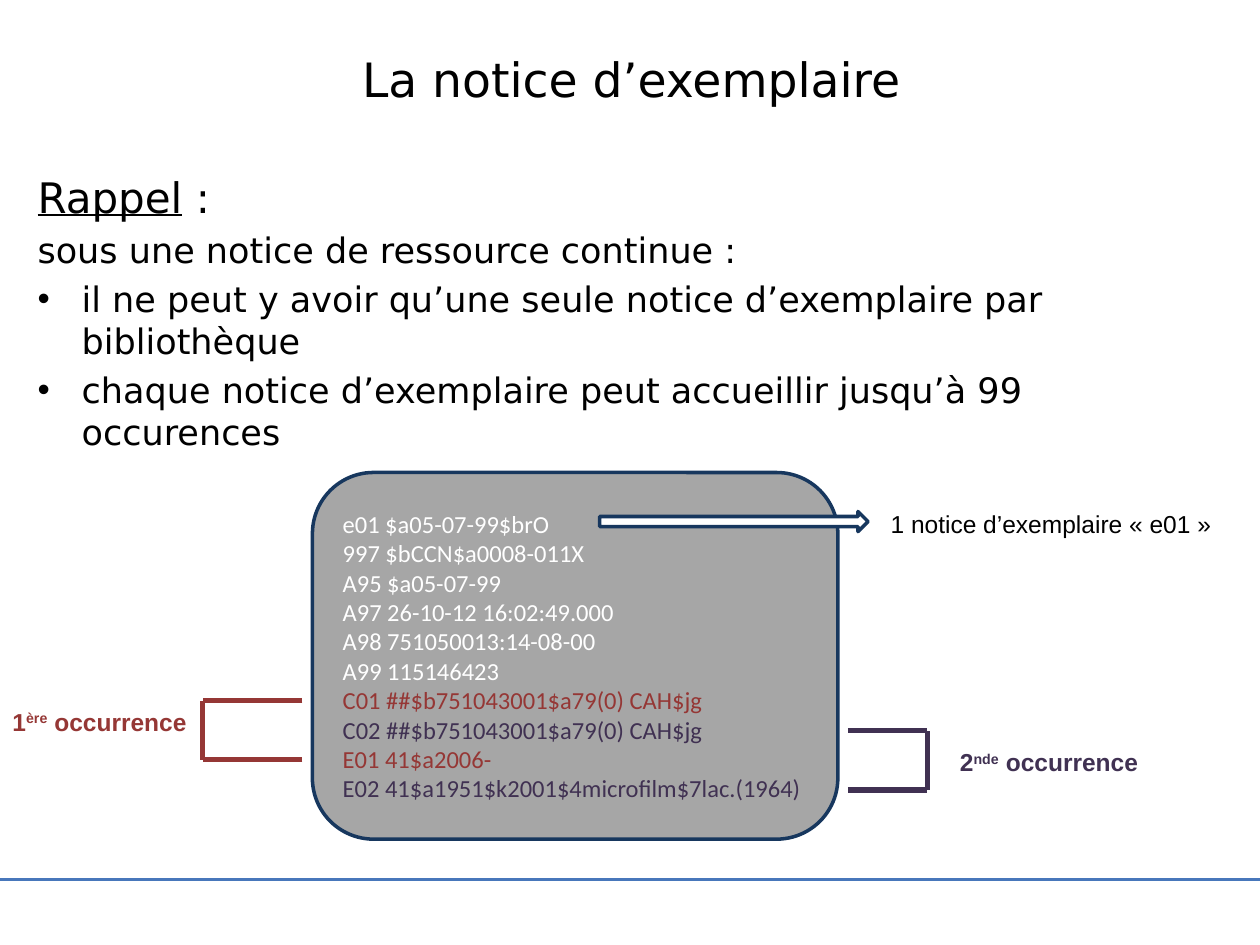
from lxml.etree import SubElement
from pptx import Presentation
from pptx.dml.color import RGBColor
from pptx.enum.shapes import MSO_CONNECTOR, MSO_SHAPE
from pptx.enum.text import MSO_ANCHOR, PP_ALIGN
from pptx.oxml.ns import qn
from pptx.util import Pt

COLORS = {
    "black": "000000", "white": "FFFFFF", "gray": "A6A6A6", "navy": "17375E",
    "blue": "4877BB", "red": "953735", "purple": "403152",
}


class SlideBuilder:
    """Draws styled elements on the current slide, with lengths in points."""

    def __init__(self, slide):
        self.slide = slide
        self.heading_font = "DejaVu Sans"
        self.record_font = "Calibri"
        self.label_font = "Arial"

    def color(self, name):
        return RGBColor.from_string(COLORS[name])

    def run(self, paragraph, text, font, size, color="black", bold=False,
            underline=False, superscript=False):
        run = paragraph.add_run()
        run.text = text
        run.font.name = font
        run.font.size = Pt(size)
        run.font.bold = bold
        run.font.underline = underline
        run.font.color.rgb = self.color(color)
        if superscript:
            run._r.get_or_add_rPr().set("baseline", "30000")

    def textbox(self, left, top, width, height, wrap=True):
        shape = self.slide.shapes.add_textbox(Pt(left), Pt(top), Pt(width), Pt(height))
        shape.text_frame.word_wrap = wrap
        return shape.text_frame

    def paragraph(self, frame, index):
        return frame.add_paragraph() if index else frame.paragraphs[0]

    def title(self, text):
        frame = self.textbox(36.72, 0, 648, 90)
        frame.vertical_anchor = MSO_ANCHOR.MIDDLE
        paragraph = frame.paragraphs[0]
        paragraph.alignment = PP_ALIGN.CENTER
        self.run(paragraph, text, self.heading_font, 27)

    def body(self, heading, intro, bullets):
        frame = self.textbox(14.4, 94.32, 691.92, 388)
        paragraph = frame.paragraphs[0]
        self.run(paragraph, heading, self.heading_font, 24, underline=True)
        self.run(paragraph, " :", self.heading_font, 24)
        for index, text in enumerate([intro, *bullets]):
            paragraph = frame.add_paragraph()
            if index:
                properties = paragraph._p.get_or_add_pPr()
                properties.set("marL", str(Pt(25.2)))
                properties.set("indent", str(-Pt(25.2)))
                SubElement(properties, qn("a:buFont")).set("typeface", "Arial")
                SubElement(properties, qn("a:buChar")).set("char", "•")
            paragraph.space_before = Pt(4)
            self.run(paragraph, text, self.heading_font, 20)

    def shape(self, preset, left, top, width, height, fill):
        shape = self.slide.shapes.add_shape(
            preset, Pt(left), Pt(top), Pt(width), Pt(height))
        shape.shadow.inherit = False
        shape.fill.solid()
        shape.fill.fore_color.rgb = self.color(fill)
        shape.line.color.rgb = self.color("navy")
        shape.line.width = Pt(2)
        return shape

    def record(self, left, top, width, height, lines):
        shape = self.shape(MSO_SHAPE.ROUNDED_RECTANGLE, left, top, width, height, "gray")
        frame = shape.text_frame
        frame.word_wrap = True
        frame.vertical_anchor = MSO_ANCHOR.MIDDLE
        for index, (text, color) in enumerate(lines):
            paragraph = self.paragraph(frame, index)
            paragraph.alignment = PP_ALIGN.LEFT
            self.run(paragraph, text, self.record_font, 14, color)

    def line(self, start, end, color, width):
        connector = self.slide.shapes.add_connector(
            MSO_CONNECTOR.STRAIGHT, *(Pt(value) for value in (*start, *end)))
        connector.line.color.rgb = self.color(color)
        connector.line.width = Pt(width)
        SubElement(connector._element.spPr, qn("a:effectLst"))

    def bracket(self, open_x, spine_x, top, color):
        bottom = top + 33.84
        for y in (top, bottom):
            self.line((open_x, y), (spine_x, y), color, 3)
        self.line((spine_x, bottom), (spine_x, top), color, 3)

    def label(self, left, top, width, text, color="black", ordinal=None):
        paragraph = self.textbox(left, top, width, 24.48, wrap=False).paragraphs[0]
        bold = ordinal is not None
        if ordinal:
            number, suffix = ordinal
            self.run(paragraph, number, self.label_font, 14, color, bold)
            self.run(paragraph, suffix, self.label_font, 14, color, bold, superscript=True)
            text = " " + text
        self.run(paragraph, text, self.label_font, 14, color, bold)


def main():
    presentation = Presentation()
    presentation.slide_width, presentation.slide_height = Pt(720), Pt(540)
    slide = presentation.slides.add_slide(presentation.slide_layouts[6])
    builder = SlideBuilder(slide)

    builder.line((0, 502.56), (720, 502.56), "blue", 1.5)
    builder.title("La notice d’exemplaire")
    builder.body("Rappel", "sous une notice de ressource continue :", [
        "il ne peut y avoir qu’une seule notice d’exemplaire par bibliothèque",
        "chaque notice d’exemplaire peut accueillir jusqu’à 99 occurences",
    ])
    builder.record(178.56, 270, 300.24, 209.52, [
        ("e01 $a05-07-99$brO", "white"),
        ("997 $bCCN$a0008-011X", "white"),
        ("A95 $a05-07-99", "white"),
        ("A97 26-10-12 16:02:49.000", "white"),
        ("A98 751050013:14-08-00", "white"),
        ("A99 115146423", "white"),
        ("C01 ##$b751043001$a79(0) CAH$jg", "red"),
        ("C02 ##$b751043001$a79(0) CAH$jg", "purple"),
        ("E01 41$a2006-", "red"),
        ("E02 41$a1951$k2001$4microfilm$7lac.(1964)", "purple"),
    ])
    builder.shape(MSO_SHAPE.RIGHT_ARROW, 342.72, 292.32, 153.36, 11.52, "white")
    builder.bracket(172.8, 115.92, 400.32, "red")
    builder.bracket(484.56, 529.92, 417.6, "purple")
    builder.label(501.84, 287.28, 198.72, "1 notice d’exemplaire « e01 »")
    builder.label(0, 400.32, 116.64, "occurrence", "red", ("1", "ère"))
    builder.label(541.44, 423.36, 123.12, "occurrence", "purple", ("2", "nde"))
    presentation.save("out.pptx")


if __name__ == "__main__":
    main()
